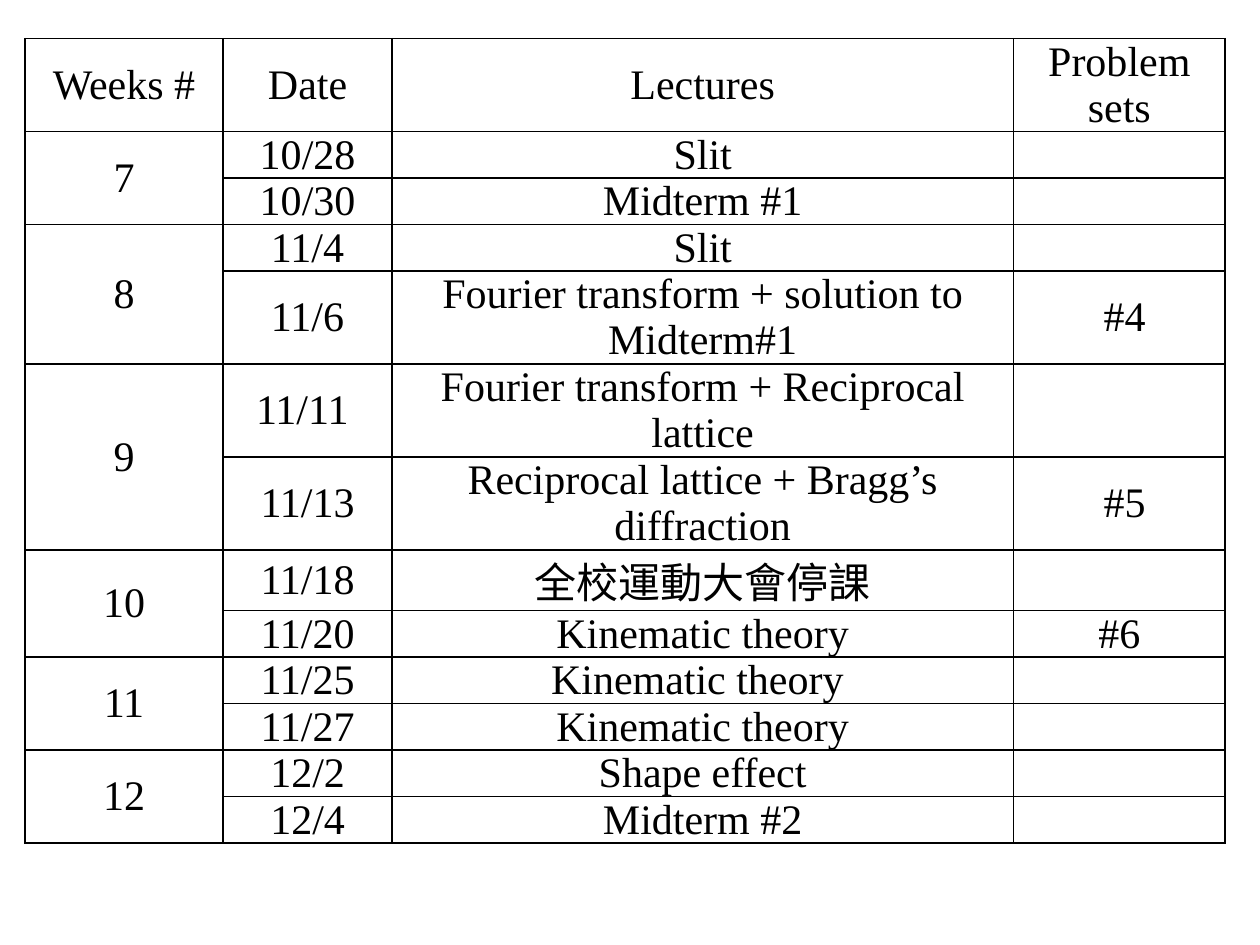
"""Build a course schedule slide with one table of weeks, dates and lectures."""
import pptx
import pptx.dml.color
import pptx.enum.text
import pptx.oxml
import pptx.oxml.ns
import pptx.util

Cm = pptx.util.Cm
Pt = pptx.util.Pt
BLACK = pptx.dml.color.RGBColor(0, 0, 0)
FONT = "Times New Roman"

HEADER = ("Weeks #", "Date", "Lectures", "Problem sets")
WEEKS = {
    "7": [("10/28", "Slit", ""), ("10/30", "Midterm #1", "")],
    "8": [("11/4", "Slit", ""),
          ("11/6", "Fourier transform + solution to Midterm#1", " #4")],
    "9": [("11/11 ", "Fourier transform + Reciprocal lattice", ""),
          ("11/13", "Reciprocal lattice + Bragg’s diffraction", " #5")],
    "10": [("11/18", "全校運動大會停課", ""), ("11/20", "Kinematic theory", "#6")],
    "11": [("11/25", "Kinematic theory ", ""), ("11/27", "Kinematic theory", "")],
    "12": [("12/2", "Shape effect", ""), ("12/4", "Midterm #2", "")],
}
COL_WIDTHS = (4.0, 3.4, 12.53, 4.27)
LINE, TWO_LINES, CJK_LINE = 0.93, 1.87, 1.21
ROW_HEIGHTS = (TWO_LINES, LINE, LINE, LINE, TWO_LINES, TWO_LINES, TWO_LINES,
               CJK_LINE, LINE, LINE, LINE, LINE, LINE)


def add_borders(cell):
    tc_pr = cell._tc.get_or_add_tcPr()
    for i, side in enumerate(("lnL", "lnR", "lnT", "lnB")):
        tc_pr.insert(i, pptx.oxml.parse_xml(
            f'<a:{side} {pptx.oxml.ns.nsdecls("a")} w="{Pt(1)}"><a:solidFill>'
            f'<a:srgbClr val="{BLACK}"/></a:solidFill></a:{side}>'))


def fill_cell(cell, text):
    cell.fill.background()
    add_borders(cell)
    cell.margin_left = cell.margin_right = Cm(0.05)
    cell.margin_top = cell.margin_bottom = 0
    cell.vertical_anchor = pptx.enum.text.MSO_ANCHOR.MIDDLE
    p = cell.text_frame.paragraphs[0]
    p.alignment = pptx.enum.text.PP_ALIGN.CENTER
    if text:
        r = p.add_run()
        r.text = text
        r.font.size = Pt(24)
        r.font.name = FONT
        r.font.bold = False
        r.font.color.rgb = BLACK


def main():
    prs = pptx.Presentation()
    prs.slide_width, prs.slide_height = Cm(25.4), Cm(19.05)
    s = prs.slides.add_slide(prs.slide_layouts[6])

    rows = [HEADER]
    for week, lectures in WEEKS.items():
        for i, lecture in enumerate(lectures):
            rows.append((week if i == 0 else "", *lecture))

    table = s.shapes.add_table(
        len(rows), len(HEADER), Cm(0.5), Cm(0.78),
        Cm(sum(COL_WIDTHS)), Cm(sum(ROW_HEIGHTS))).table
    table.first_row = table.horz_banding = False
    for col, width in zip(table.columns, COL_WIDTHS):
        col.width = Cm(width)
    for row, height, texts in zip(table.rows, ROW_HEIGHTS, rows):
        row.height = Cm(height)
        for cell, text in zip(row.cells, texts):
            fill_cell(cell, text)

    top = 1
    for lectures in WEEKS.values():
        bottom = top + len(lectures) - 1
        table.cell(top, 0).merge(table.cell(bottom, 0))
        top = bottom + 1

    prs.save("out.pptx")


if __name__ == "__main__":
    main()
